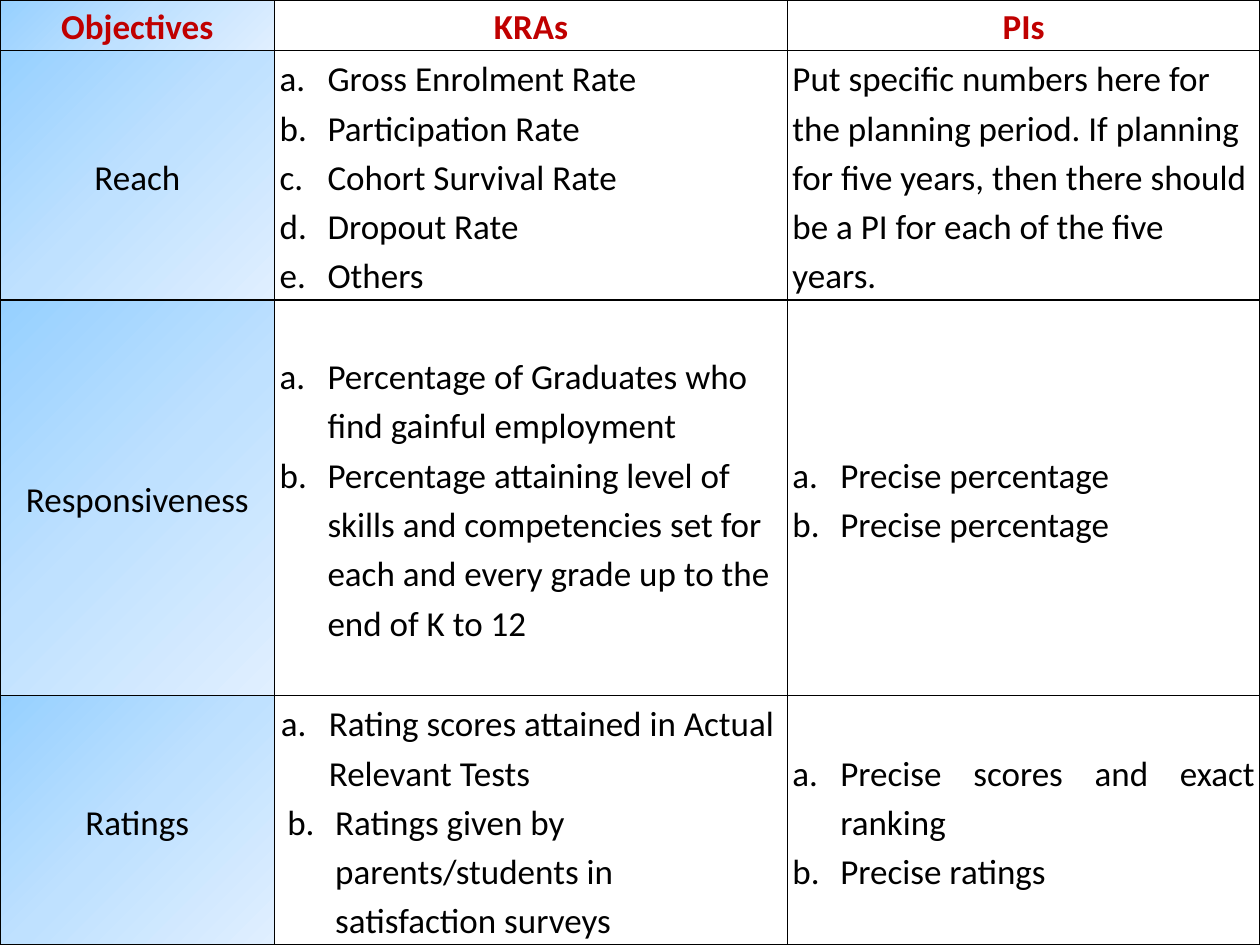
"""Build a one-slide table of objectives, key result areas and performance indicators."""
from lxml.etree import SubElement
from pptx import Presentation
from pptx.dml.color import RGBColor
from pptx.enum.text import MSO_ANCHOR, PP_ALIGN
from pptx.oxml.ns import qn
from pptx.util import Inches, Pt

COLORS = {
    "heading": "C00000",
    "text": "000000",
    "border": "000000",
    "cell": "FFFFFF",
    "objective_start": "96D0FF",
    "objective_middle": "BFE1FF",
    "objective_end": "E0EFFF",
}
CENTER, JUSTIFY, LEFT = PP_ALIGN.CENTER, PP_ALIGN.JUSTIFY, PP_ALIGN.LEFT
HANGING = 0.38


def write(paragraph, text, color="text", bold=False, align=LEFT, margin=0, lettered=False):
    properties = paragraph._p.get_or_add_pPr()
    if margin:
        properties.set("marL", str(Inches(margin)))
        properties.set("indent", str(-Inches(HANGING)))
    if lettered:
        SubElement(properties, qn("a:buAutoNum"), type="alphaLcPeriod")
    paragraph.alignment = align
    paragraph.line_spacing = 1.15
    run = paragraph.add_run()
    run.text = text
    run.font.name = "Calibri"
    run.font.size = Pt(20)
    run.font.bold = bold
    run.font.color.rgb = RGBColor.from_string(COLORS[color])


def style_cell(cell, is_objective):
    cell.margin_left = cell.margin_right = Inches(0.04)
    cell.margin_top = cell.margin_bottom = 0
    properties = cell._tc.get_or_add_tcPr()
    for side in ("lnL", "lnR", "lnT", "lnB"):
        border = SubElement(properties, qn(f"a:{side}"), w=str(Pt(1)))
        SubElement(SubElement(border, qn("a:solidFill")), qn("a:srgbClr"), val=COLORS["border"])
    if is_objective:
        gradient = SubElement(properties, qn("a:gradFill"), rotWithShape="1")
        stops = SubElement(gradient, qn("a:gsLst"))
        for percent, shade in ((0, "start"), (50, "middle"), (100, "end")):
            stop = SubElement(stops, qn("a:gs"), pos=str(percent * 1000))
            SubElement(stop, qn("a:srgbClr"), val=COLORS[f"objective_{shade}"])
        SubElement(gradient, qn("a:lin"), ang=str(45 * 60000), scaled="0")
    else:
        cell.fill.solid()
        cell.fill.fore_color.rgb = RGBColor.from_string(COLORS["cell"])


heading = {"color": "heading", "bold": True, "align": CENTER}
objective = {"align": CENTER, "margin": HANGING}
item = {"margin": HANGING, "lettered": True}
justified_item = {**item, "align": JUSTIFY}

rows = [
    [[("Objectives", heading)], [("KRAs", heading)], [("PIs", heading)]],
    [
        [("Reach", objective)],
        [
            ("Gross Enrolment Rate", justified_item),
            ("Participation Rate", justified_item),
            ("Cohort Survival Rate", justified_item),
            ("Dropout Rate", justified_item),
            ("Others", justified_item),
        ],
        [(
            "Put specific numbers here for the planning period. If planning for "
            "five years, then there should be a PI for each of the five years.",
            {},
        )],
    ],
    [
        [("Responsiveness", objective)],
        [
            ("Percentage of Graduates who find gainful employment", item),
            (
                "Percentage attaining level of skills and competencies set for "
                "each and every grade up to the end of K to 12",
                item,
            ),
        ],
        [("Precise percentage", justified_item), ("Precise percentage", justified_item)],
    ],
    [
        [("Ratings", objective)],
        [
            ("Rating scores attained in Actual Relevant Tests", {**item, "margin": 0.39}),
            (
                "Ratings given by parents/students in satisfaction surveys",
                {**item, "margin": 0.44},
            ),
        ],
        [("Precise scores and exact ranking", justified_item), ("Precise ratings", justified_item)],
    ],
]

presentation = Presentation()
presentation.slide_width = Inches(10)
presentation.slide_height = Inches(7.5)
slide = presentation.slides.add_slide(presentation.slide_layouts[6])

plan = slide.shapes.add_table(4, 3, 0, 0, Inches(10), Inches(7.5)).table
plan.first_row = plan.horz_banding = False
for column, width in zip(plan.columns, (2.18, 4.07, 3.75)):
    column.width = Inches(width)
for row, height in zip(plan.rows, (0.4, 1.98, 3.14, 1.98)):
    row.height = Inches(height)

for row_index, row_content in enumerate(rows):
    for column_index, entries in enumerate(row_content):
        cell = plan.cell(row_index, column_index)
        style_cell(cell, column_index == 0)
        cell.vertical_anchor = MSO_ANCHOR.MIDDLE if row_index else MSO_ANCHOR.TOP
        for entry_index, (text, text_format) in enumerate(entries):
            frame = cell.text_frame
            paragraph = frame.add_paragraph() if entry_index else frame.paragraphs[0]
            write(paragraph, text, **text_format)

presentation.save("out.pptx")
